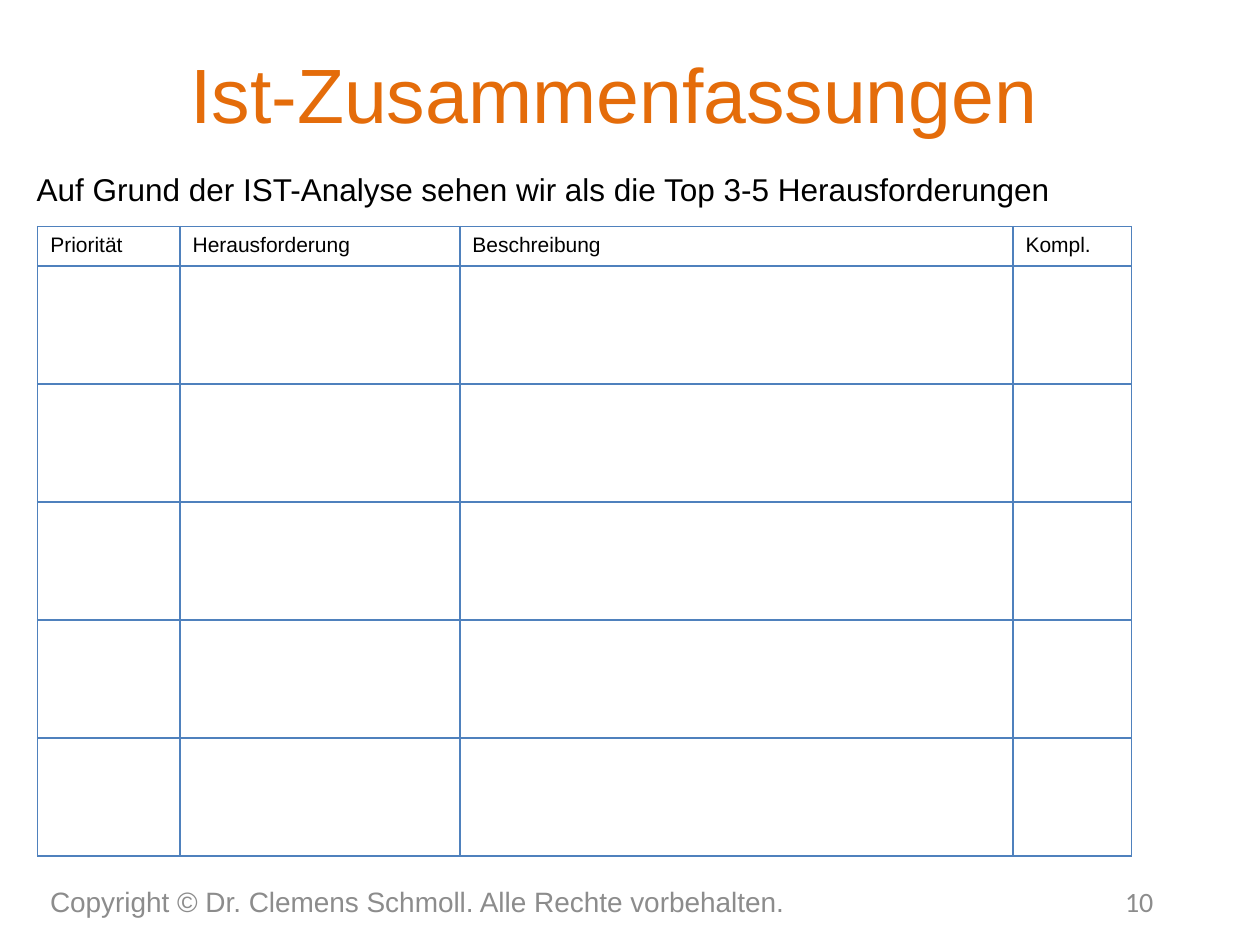
from lxml.etree import SubElement
from pptx import Presentation
from pptx.dml.color import RGBColor
from pptx.enum.text import MSO_ANCHOR as Anchor, PP_ALIGN as Align
from pptx.oxml.ns import qn
from pptx.util import Cm, Pt

COLORS = {"title": "E46C0A", "text": "000000", "footer": "8C8C8C", "grid": "4F81BD"}


def style(para, size, color, font="Arial", align=Align.LEFT):
    para.alignment = align
    para.font.name = font
    para.font.size = Pt(size)
    para.font.color.rgb = RGBColor.from_string(COLORS[color])


def add_text(page, text, left, top, width, height, wrap=True, anchor=Anchor.MIDDLE):
    frame = page.shapes.add_textbox(Cm(left), Cm(top), Cm(width), Cm(height)).text_frame
    frame.word_wrap = wrap
    frame.vertical_anchor = anchor
    frame.text = text
    return frame.paragraphs[0]


deck = Presentation()
deck.slide_width, deck.slide_height = Cm(25.4), Cm(19.05)
page = deck.slides.add_slide(deck.slide_layouts[5])

# Title
title = page.shapes.title
title.left, title.top, title.width, title.height = Cm(1.27), Cm(0.28), Cm(22.23), Cm(3.18)
title.text_frame.text = "Ist-Zusammenfassungen"
title.text_frame.vertical_anchor = Anchor.MIDDLE
style(title.text_frame.paragraphs[0], 44, "title", align=Align.CENTER)

# Lead sentence
lead = add_text(page, "Auf Grund der IST-Analyse sehen wir als die Top 3-5 Herausforderungen",
                0.49, 3.3, 21.13, 1.02, wrap=False, anchor=Anchor.TOP)
style(lead, 18, "text")

# Table of challenges: one header row and five empty rows
headers = ["Priorität", "Herausforderung", "Beschreibung", "Kompl."]
widths = [2.87, 5.64, 11.15, 2.39]
heights = [0.79] + [2.38] * 5
table = page.shapes.add_table(len(heights), len(widths), Cm(0.76), Cm(4.57),
                              Cm(sum(widths)), Cm(sum(heights))).table
table.first_row = table.horz_banding = False
for column, width in zip(table.columns, widths):
    column.width = Cm(width)
for row, height in zip(table.rows, heights):
    row.height = Cm(height)
for cell, header in zip(table.rows[0].cells, headers):
    cell.text = header
    style(cell.text_frame.paragraphs[0], 12, "text")

# Grid lines, which must stand before the fill in each cell
for cell in table.iter_cells():
    properties = cell._tc.get_or_add_tcPr()
    for side in ("a:lnL", "a:lnR", "a:lnT", "a:lnB"):
        line = SubElement(properties, qn(side), w=str(Pt(1)))
        solid = SubElement(line, qn("a:solidFill"))
        SubElement(solid, qn("a:srgbClr"), val=COLORS["grid"])
    cell.fill.background()

# Footer and page number
footer = add_text(page, "Copyright © Dr. Clemens Schmoll. Alle Rechte vorbehalten.",
                  0.76, 17.65, 16.15, 1.02)
style(footer, 16, "footer")
number = add_text(page, "10", 17.58, 17.65, 5.92, 1.02)
style(number, 16, "footer", font="Calibri", align=Align.RIGHT)

deck.save("out.pptx")
